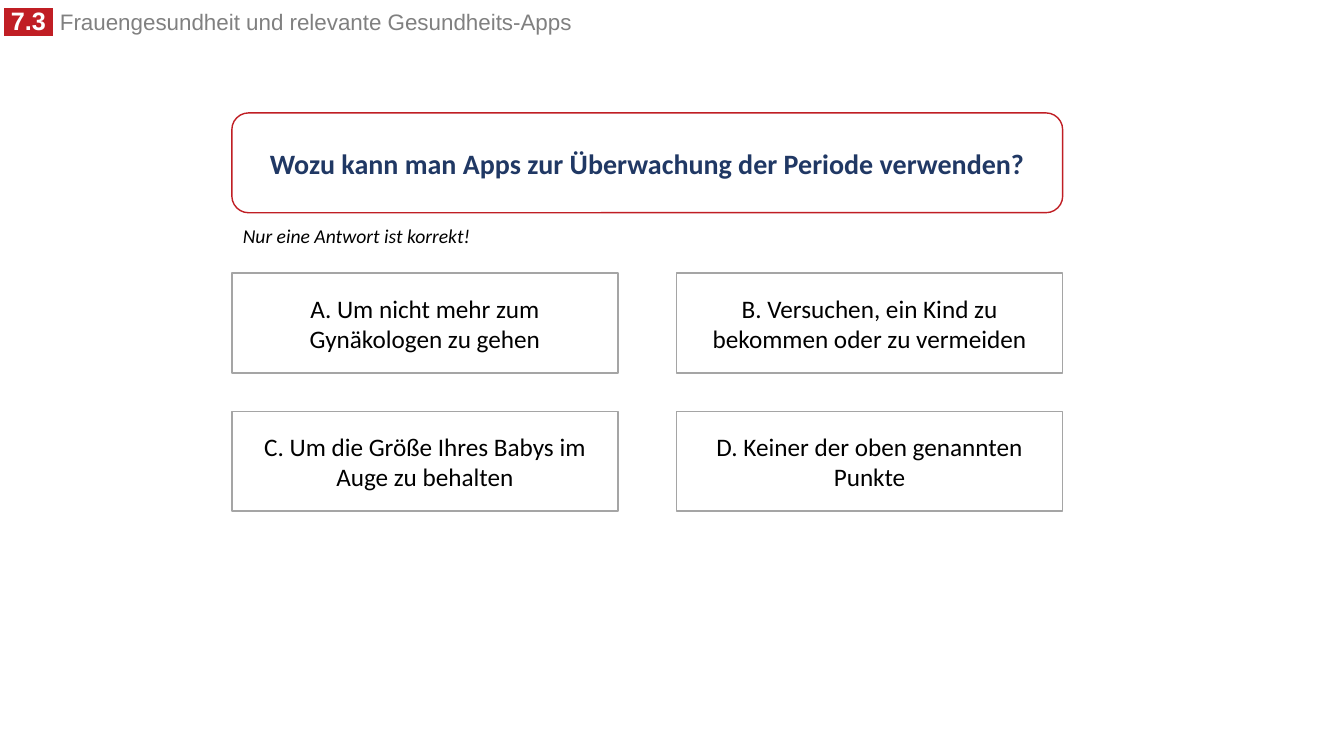
from lxml.etree import SubElement
from pptx import Presentation
from pptx.dml.color import RGBColor
from pptx.enum.shapes import MSO_SHAPE as Shape
from pptx.enum.text import MSO_ANCHOR as Anchor, MSO_AUTO_SIZE as AutoSize, PP_ALIGN as Align
from pptx.oxml.ns import qn
from pptx.util import Emu, Pt

RED, NAVY, GREY, BORDER = "C01E24", "203864", "808080", "A5A5A5"
BLACK, WHITE = "000000", "FFFFFF"
ANSWERS = [
    "A. Um nicht mehr zum Gynäkologen zu gehen",
    "B. Versuchen, ein Kind zu bekommen oder zu vermeiden",
    "C. Um die Größe Ihres Babys im Auge zu behalten",
    "D. Keiner der oben genannten Punkte",
]


def px(length):
    """Turn px, 100 to the inch, into EMU."""
    return Emu(length * 9144)


def color(hex_code):
    """Return the colour for a hex string."""
    return RGBColor.from_string(hex_code)


def write(paragraph, text, size=18, font="Calibri", ink=BLACK, bold=False, italic=False, highlight=None):
    """Add a formatted run to a paragraph."""
    run = paragraph.add_run()
    run.text = text
    run.font.size, run.font.name = Pt(size), font
    run.font.bold, run.font.italic = bold, italic
    run.font.color.rgb = color(ink)
    if highlight:
        properties = run.font._element
        marker = SubElement(properties, qn("a:highlight"))
        SubElement(marker, qn("a:srgbClr"), val=highlight)
        properties.find(qn("a:solidFill")).addnext(marker)


def add_label(slide, box, wrap=True):
    """Add a text box and return its paragraph."""
    frame = slide.shapes.add_textbox(*map(px, box)).text_frame
    frame.word_wrap = wrap
    frame.auto_size = AutoSize.SHAPE_TO_FIT_TEXT
    return frame.paragraphs[0]


def add_card(slide, box, text, outline, kind=Shape.RECTANGLE, **style):
    """Add an outlined white card with centred text."""
    card = slide.shapes.add_shape(kind, *map(px, box))
    card.shadow.inherit = False
    card.fill.solid()
    card.fill.fore_color.rgb = color(WHITE)
    card.line.color.rgb = color(outline)
    card.line.width = Pt(1)
    frame = card.text_frame
    frame.word_wrap = True
    frame.vertical_anchor = Anchor.MIDDLE
    frame.paragraphs[0].alignment = Align.CENTER
    write(frame.paragraphs[0], text, **style)


def add_header(slide, box):
    """Place the section number and section title."""
    header = add_label(slide, box)
    header.line_spacing = 0.8
    write(header, " 7.3 ", font="Arial", ink=WHITE, bold=True, highlight=RED)
    write(header, " ", font="Arial", ink=GREY)
    write(header, "Frauengesundheit und relevante Gesundheits-Apps", size=16, font="Arial", ink=GREY)


def add_quiz(slide, box):
    """Place the question, its hint and the grid of answers."""
    left, top, width, height = box
    card_width, card_height = 383, 99
    add_card(slide, (left, top, width, card_height),
             "Wozu kann man Apps zur Überwachung der Periode verwenden?",
             RED, Shape.ROUNDED_RECTANGLE, size=20, ink=NAVY, bold=True)
    hint = add_label(slide, (left + 1, top + 105, 247, 34), wrap=False)
    write(hint, "Nur eine Antwort ist korrekt!", size=14, italic=True)
    row_step = 137
    first_row = top + height - card_height - row_step
    for index, answer in enumerate(ANSWERS):
        row, column = divmod(index, 2)
        x = left + column * (width - card_width)
        add_card(slide, (x, first_row + row * row_step, card_width, card_height), answer, BORDER)


def main():
    """Build and save the quiz slide."""
    deck = Presentation()
    deck.slide_width, deck.slide_height = px(1333), px(750)
    slide = deck.slides.add_slide(deck.slide_layouts[6])
    add_header(slide, (-6, 6, 686, 35))
    add_quiz(slide, (230, 112, 824, 395))
    deck.save("out.pptx")


if __name__ == "__main__":
    main()
